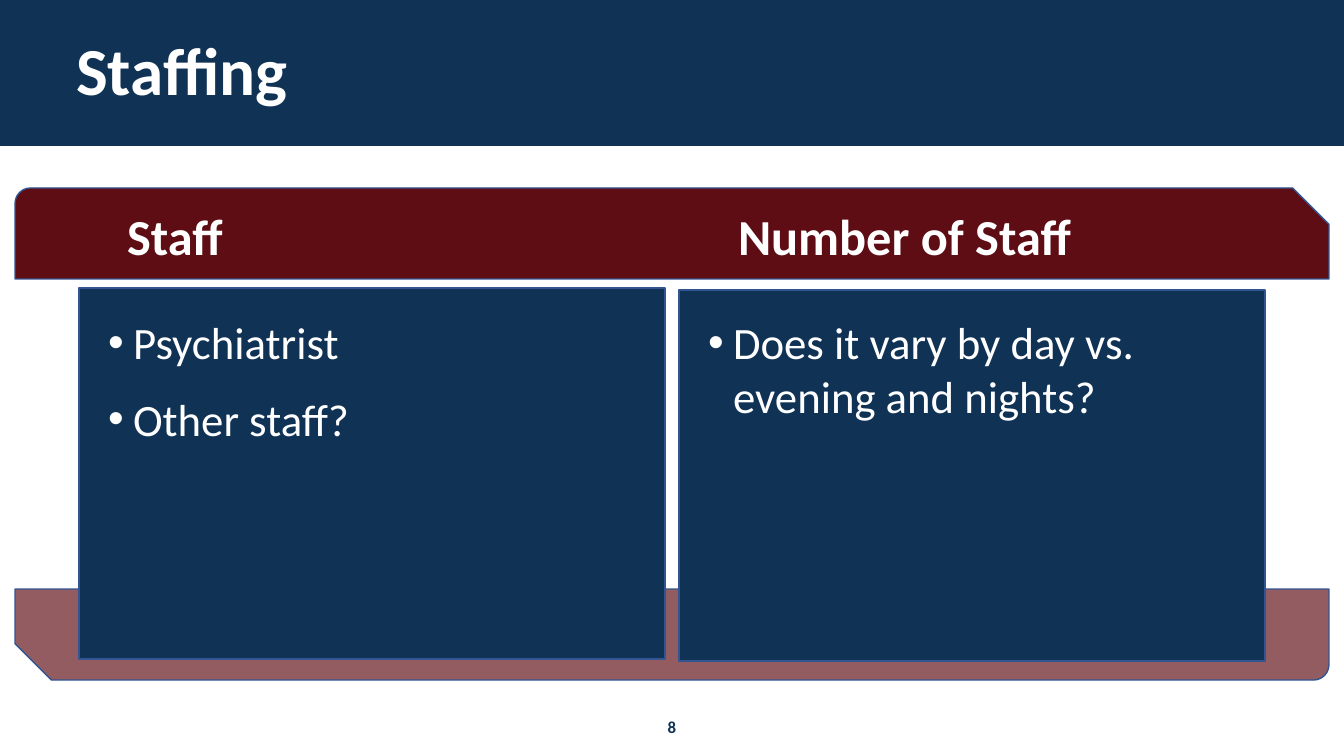
from lxml.etree import SubElement
from pptx import Presentation
from pptx.dml.color import RGBColor as Rgb
from pptx.enum.shapes import MSO_SHAPE as Kind
from pptx.enum.text import MSO_ANCHOR as Anchor, MSO_AUTO_SIZE as Fit, PP_ALIGN as Align
from pptx.oxml.ns import qn
from pptx.util import Pt

PX = 914400 / 100.8
INK = {"navy": "103255", "wine": "5F0D14", "edge": "325491", "white": "FFFFFF"}
COLS = [
    (79, 288, 38, 545, 19, 563, "Staff", ["Psychiatrist", "Other staff?"]),
    (679, 290, 49, 564, 19, 596, "Number of Staff",
     ["Does it vary by day vs. evening and nights?"]),
]


def px(*nums):
    return [round(n * PX) for n in nums]


def tint(name):
    return Rgb.from_string(INK[name])


def block(slide, box, fill, edge=None, kind=Kind.RECTANGLE):
    shape = slide.shapes.add_shape(kind, *px(*box))
    shape.shadow.inherit = False
    shape.fill.solid()
    shape.fill.fore_color.rgb = tint(fill)
    if edge:
        shape.line.color.rgb = tint(edge)
        shape.line.width = Pt(1)
    else:
        shape.line.fill.background()
    return shape


def bar(slide, box):
    shape = block(slide, box, "wine", "edge", Kind.SNIP_ROUND_RECTANGLE)
    shape.adjustments[0] = 0.17
    shape.adjustments[1] = 0.4
    return shape


def base(slide, box):
    shape = bar(slide, box)
    shape.rotation = 180
    color = shape.element.spPr.find(qn("a:solidFill"))[0]
    SubElement(color, qn("a:alpha"), val="67000")


def place(shape, box, anchor):
    shape.left, shape.top, shape.width, shape.height = px(*box)
    tree = shape.element.getparent()
    tree.append(shape.element)
    frame = shape.text_frame
    frame.word_wrap = True
    frame.auto_size = Fit.NONE
    frame.vertical_anchor = anchor
    return frame


def write(para, text, size, color="white", bold=True, align=Align.LEFT):
    para.alignment = align
    para.space_before = Pt(0)
    run = para.add_run()
    run.text = text
    font = run.font
    font.name, font.size, font.bold = "Calibri", Pt(size), bold
    font.color.rgb = tint(color)


def bullet(para, mark):
    props = para._p.get_or_add_pPr()
    gap = px(25)[0] if mark else 0
    props.set("marL", str(gap))
    props.set("indent", str(-gap))
    if mark:
        SubElement(props, qn("a:buFont"), typeface="Arial")
        SubElement(props, qn("a:buChar"), char=mark)
    else:
        SubElement(props, qn("a:buNone"))


def banner(slide, box):
    x, y, w, h = box
    block(slide, box, "navy")
    frame = place(slide.shapes.title, (x + 66, y + 40, 1214, 68), Anchor.MIDDLE)
    para = frame.paragraphs[0]
    write(para, "Staffing", 48)
    para.line_spacing = 0.9


def column(head, body, col):
    x, y, shift, wide, inset, span, name, items = col
    frame = place(head, (x + shift, 172, wide, 99), Anchor.BOTTOM)
    para = frame.paragraphs[0]
    bullet(para, None)
    write(para, name, 36)
    para.space_after = Pt(6)
    frame = place(body, (x + inset, 310, span, 99), Anchor.TOP)
    for i, item in enumerate(items):
        para = frame.add_paragraph() if i else frame.paragraphs[0]
        bullet(para, "•")
        write(para, item, 32, bold=False)
        para.space_before = Pt(10 if i else 0)
        para.space_after = Pt(6)


def number(slide, box):
    frame = slide.shapes.add_textbox(*px(*box)).text_frame
    frame.word_wrap = True
    write(frame.paragraphs[0], "8", 12, "navy", align=Align.CENTER)


def main():
    deck = Presentation()
    deck.slide_width, deck.slide_height = px(1344, 756)
    slide = deck.slides.add_slide(deck.slide_layouts[4])
    banner(slide, (0, 0, 1344, 146))
    number(slide, (614, 712, 116, 30))
    base(slide, (15, 589, 1314, 91))
    for col in COLS:
        block(slide, (col[0], col[1], 586, 371), "navy", "edge")
    bar(slide, (15, 188, 1314, 91))
    holders = {p.placeholder_format.idx: p for p in slide.placeholders}
    for i, col in enumerate(COLS):
        column(holders[2 * i + 1], holders[2 * i + 2], col)
    deck.save("out.pptx")


if __name__ == "__main__":
    main()
